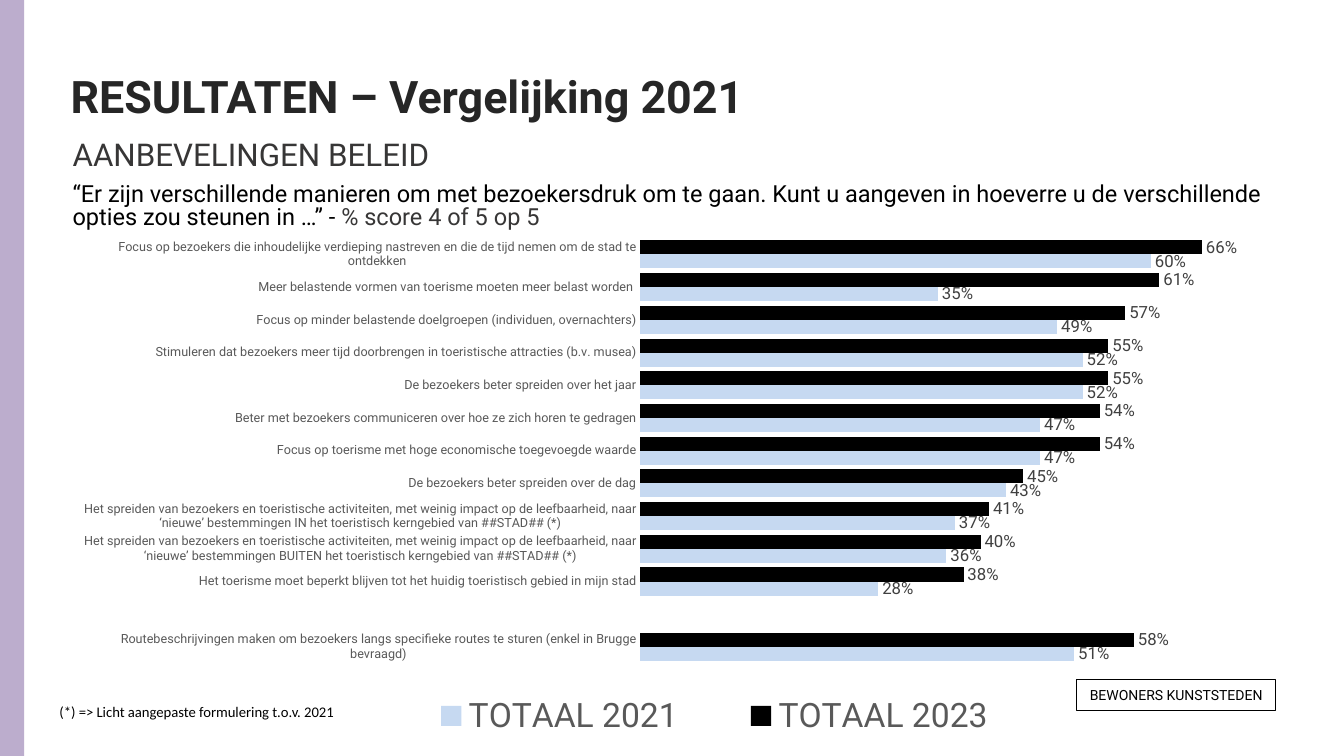
from lxml import etree
from pptx import Presentation, util as u
from pptx.chart.data import CategoryChartData
from pptx.dml.color import RGBColor
from pptx.enum import chart as ch, shapes, text
from pptx.oxml.ns import qn

# Slide grid: 100 columns by 100 rows
SLIDE_W, SLIDE_H = u.Inches(13.33), u.Inches(7.5)
COL, ROW = SLIDE_W / 100, SLIDE_H / 100

BLACK = RGBColor(0x00, 0x00, 0x00)
TITLE_GREY = RGBColor(0x26, 0x26, 0x26)
BODY_GREY = RGBColor(0x37, 0x36, 0x36)
LABEL_GREY = RGBColor(0x40, 0x40, 0x40)
AXIS_GREY = RGBColor(0x59, 0x59, 0x59)
LILAC = RGBColor(0xB3, 0xA2, 0xC7)
PALE_BLUE = RGBColor(0xC6, 0xD9, 0xF1)

SPREAD = ("Het spreiden van bezoekers en toeristische activiteiten, met weinig impact op de "
          "leefbaarheid, naar ‘nieuwe’ bestemmingen {} het toeristisch kerngebied van ##STAD## (*)")
# Policy option, share in 2023, share in 2021
OPTIONS = [
    ("Focus op bezoekers die inhoudelijke verdieping nastreven en die de tijd nemen "
     "om de stad te ontdekken", 0.66, 0.60),
    ("Meer belastende vormen van toerisme moeten meer belast worden ", 0.61, 0.35),
    ("Focus op minder belastende doelgroepen (individuen, overnachters)", 0.57, 0.49),
    ("Stimuleren dat bezoekers meer tijd doorbrengen in toeristische attracties (b.v. musea)",
     0.55, 0.52),
    ("De bezoekers beter spreiden over het jaar", 0.55, 0.52),
    ("Beter met bezoekers communiceren over hoe ze zich horen te gedragen", 0.54, 0.47),
    ("Focus op toerisme met hoge economische toegevoegde waarde", 0.54, 0.47),
    ("De bezoekers beter spreiden over de dag", 0.45, 0.43),
    (SPREAD.format("IN"), 0.41, 0.37),
    (SPREAD.format("BUITEN"), 0.40, 0.36),
    ("Het toerisme moet beperkt blijven tot het huidig toeristisch gebied in mijn stad",
     0.38, 0.28),
    ("", None, None),
    ("Routebeschrijvingen maken om bezoekers langs specifieke routes te sturen "
     "(enkel in Brugge bevraagd)", 0.58, 0.51),
]


def area(col, row, cols, rows):
    return [round(n) for n in (col * COL, row * ROW, cols * COL, rows * ROW)]


def assign(target, **values):
    for name, value in values.items():
        setattr(target, name, value)


def set_font(font, size, color, name="Roboto", bold=False):
    assign(font, size=u.Pt(size), name=name, bold=bold)
    font.color.rgb = color


def add_run(paragraph, wording, *font):
    run = paragraph.add_run()
    run.text = wording
    set_font(run.font, *font)


def move(placeholder, *cells):
    left, top, width, height = area(*cells)
    assign(placeholder, left=left, top=top, width=width, height=height)
    assign(placeholder.text_frame, auto_size=text.MSO_AUTO_SIZE.NONE, word_wrap=True)
    return placeholder.text_frame


def add_box(slide, *cells):
    box = slide.shapes.add_shape(shapes.MSO_SHAPE.RECTANGLE, *area(*cells))
    box.shadow.inherit = False
    return box


def add_side_strip(slide):
    strip = add_box(slide, 0, 0, 1.8, 100)
    strip.fill.solid()
    strip.fill.fore_color.rgb = LILAC
    strip.line.fill.background()
    color = strip.fill._xPr.find(".//" + qn("a:srgbClr"))
    etree.SubElement(color, qn("a:alpha"), val="88000")


def add_title(slide, wording):
    frame = move(slide.shapes.title, 4.5, 4.27, 71.25, 16.67)
    frame.vertical_anchor = text.MSO_ANCHOR.MIDDLE
    heading = frame.paragraphs[0]
    heading.alignment = text.PP_ALIGN.LEFT
    add_run(heading, wording, 32, TITLE_GREY, "Roboto", True)


def add_question(slide, paragraphs):
    frame = move(slide.placeholders[1], 4.65, 18.13, 90.83, 13.87)
    frame.vertical_anchor = text.MSO_ANCHOR.TOP
    for i, runs in enumerate(paragraphs):
        line = frame.add_paragraph() if i else frame.paragraphs[0]
        props = line._p.get_or_add_pPr()
        props.set("marL", "0")
        props.set("indent", "0")
        etree.SubElement(props, qn("a:buNone"))
        tabs = etree.SubElement(props, qn("a:tabLst"))
        etree.SubElement(tabs, qn("a:tab"), pos=str(u.Inches(0.2)), algn="l")
        assign(line, line_spacing=0.8, space_before=u.Pt(1 if i else 0), space_after=u.Pt(8))
        for run in runs:
            add_run(line, *run)


def set_layout(parent, index, x, y, w, h, inner=False):
    """Place a part of the chart by shares of the chart's size."""
    for old in parent.findall(qn("c:layout")):
        parent.remove(old)
    layout = etree.Element(qn("c:layout"))
    manual = etree.SubElement(layout, qn("c:manualLayout"))
    values = {"layoutTarget": "inner"} if inner else {}
    values.update(xMode="edge", yMode="edge", x=x, y=y, w=w, h=h)
    for name, value in values.items():
        etree.SubElement(manual, qn("c:" + name), val=str(value))
    parent.insert(index, layout)


def add_comparison(slide):
    names, shares_2023, shares_2021 = zip(*OPTIONS)
    data = CategoryChartData(number_format="0%")
    data.categories = names
    data.add_series("TOTAAL 2023", shares_2023)
    data.add_series("TOTAAL 2021", shares_2021)
    chart = slide.shapes.add_chart(ch.XL_CHART_TYPE.BAR_CLUSTERED,
                                   *area(5.1, 30.8, 92.42, 69.47), data).chart
    assign(chart, has_title=False, has_legend=True)
    set_font(chart.font, 10, BLACK)

    # Axes
    assign(chart.value_axis, visible=False, has_major_gridlines=False,
           minimum_scale=0, maximum_scale=0.7)
    options = chart.category_axis
    assign(options, reverse_order=True, major_tick_mark=ch.XL_TICK_MARK.NONE,
           minor_tick_mark=ch.XL_TICK_MARK.NONE)
    options.format.line.fill.background()
    set_font(options.tick_labels.font, 9, AXIS_GREY)

    # Bars and their values
    bars = chart.plots[0]
    assign(bars, gap_width=33, overlap=0, vary_by_categories=False)
    for year, color in zip(bars.series, (BLACK, PALE_BLUE)):
        year.invert_if_negative = False
        year.format.fill.solid()
        year.format.fill.fore_color.rgb = color
        assign(year.data_labels, show_value=True, number_format="0%",
               number_format_is_linked=False, position=ch.XL_LABEL_POSITION.OUTSIDE_END)
        set_font(year.data_labels.font, 12, LABEL_GREY)

    # Legend and plot positions
    assign(chart.legend, position=ch.XL_LEGEND_POSITION.RIGHT, include_in_layout=False)
    set_font(chart.legend.font, 24, AXIS_GREY)
    set_layout(chart.legend._element, 1, 0.25, 0.87, 0.54, 0.1)
    set_layout(chart._chartSpace.chart.plotArea, 0, 0.46, 0.01, 0.48, 0.81, inner=True)


def add_badge(slide, wording):
    badge = add_box(slide, 80.12, 89.87, 14.78, 4.13)
    badge.fill.background()
    badge.line.color.rgb = BLACK
    badge.line.width = u.Pt(1)
    assign(badge.text_frame, word_wrap=True, vertical_anchor=text.MSO_ANCHOR.MIDDLE,
           margin_left=u.Inches(0.05), margin_right=u.Inches(0.05))
    label = badge.text_frame.paragraphs[0]
    label.alignment = text.PP_ALIGN.CENTER
    add_run(label, wording, 10, BLACK)


def add_footnote(slide, wording):
    note = slide.shapes.add_textbox(*area(3.68, 92.27, 22.43, 3.73)).text_frame
    assign(note, word_wrap=False, auto_size=text.MSO_AUTO_SIZE.SHAPE_TO_FIT_TEXT)
    add_run(note.paragraphs[0], wording, 10.5, BLACK, "Calibri")


def main():
    deck = Presentation()
    assign(deck, slide_width=SLIDE_W, slide_height=SLIDE_H)
    slide = deck.slides.add_slide(deck.slide_layouts[1])
    add_side_strip(slide)
    add_title(slide, "RESULTATEN – Vergelijking 2021")
    add_question(slide, [
        [("AANBEVELINGEN BELEID", 22.4, BODY_GREY)],
        [("“Er zijn verschillende manieren om met bezoekersdruk om te gaan. Kunt u aangeven "
          "in hoeverre u de verschillende opties zou steunen in …” - ", 16.8, BLACK),
         ("% score 4 of 5 op 5", 16.8, BODY_GREY)],
    ])
    add_badge(slide, "BEWONERS KUNSTSTEDEN")
    add_comparison(slide)
    add_footnote(slide, "(*) => Licht aangepaste formulering t.o.v. 2021")
    deck.save("out.pptx")


if __name__ == "__main__":
    main()
